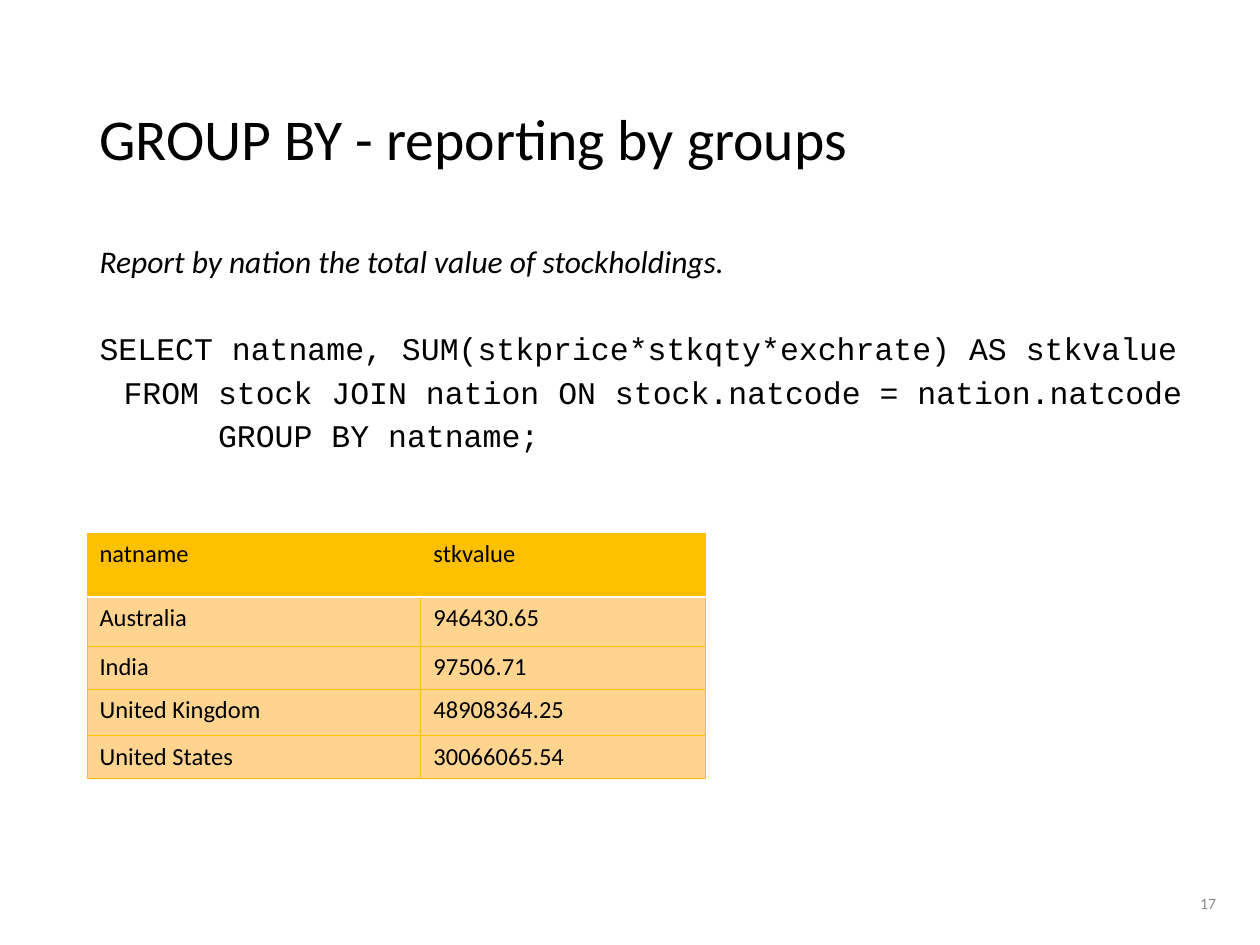
from lxml import etree
from pptx import Presentation
from pptx.dml.color import RGBColor
from pptx.enum.text import MSO_ANCHOR, MSO_AUTO_SIZE, PP_ALIGN
from pptx.oxml.ns import qn
from pptx.util import Inches, Pt

LEFT, RIGHT = PP_ALIGN.LEFT, PP_ALIGN.RIGHT
TOP, MIDDLE = MSO_ANCHOR.TOP, MSO_ANCHOR.MIDDLE
NO_FIT = MSO_AUTO_SIZE.NONE

COLORS = {
    "text": "000000",
    "number": "8C8C8C",
    "header": "FFC000",
    "row": "FFD48F",
    "rule": "FFFFFF",
}
SANS, CODE = "Calibri", "Courier New"
COLUMNS, ROWS = 100, 75

QUERY = [
    ("Report by nation the total value of stockholdings.", SANS, 0.19, -0.19, 7.5),
    ("SELECT natname, SUM(stkprice*stkqty*exchrate) AS stkvalue", CODE, 0.19, -0.19, 32.5),
    ("FROM stock JOIN nation ON stock.natcode = nation.natcode", CODE, 0.19, 0, 7.5),
    ("GROUP BY natname;", CODE, 0.94, 0, 7.5),
]
HOLDINGS = [
    ("natname", "stkvalue"),
    ("Australia", "946430.65"),
    ("India", "97506.71"),
    ("United Kingdom", "48908364.25"),
    ("United States", "30066065.54"),
]


class SlideBuilder:
    def __init__(self, deck):
        self.column = deck.slide_width / COLUMNS
        self.row = deck.slide_height / ROWS
        self.page = deck.slides.add_slide(deck.slide_layouts[1])

    def area(self, left, top, width, height):
        return [int(left * self.column), int(top * self.row),
                int(width * self.column), int(height * self.row)]

    def place(self, box, area):
        box.left, box.top, box.width, box.height = self.area(*area)

    def frame(self, box, anchor):
        frame = box.text_frame
        frame.word_wrap = True
        frame.auto_size = NO_FIT
        frame.vertical_anchor = anchor
        return frame

    def style(self, para, size, font=SANS, color="text", align=LEFT, italic=False):
        para.alignment = align
        for span in para.runs:
            span.font.name = font
            span.font.size = Pt(size)
            span.font.italic = italic
            span.font.bold = False
            span.font.color.rgb = RGBColor.from_string(COLORS[color])

    def title(self, text, area):
        box = self.page.shapes.title
        self.place(box, area)
        frame = self.frame(box, MIDDLE)
        frame.text = text
        frame.paragraphs[0].line_spacing = 0.9
        self.style(frame.paragraphs[0], 33)

    def body(self, lines, area):
        box = self.page.placeholders[1]
        self.place(box, area)
        frame = self.frame(box, TOP)
        frame.text = "\n".join(line[0] for line in lines)
        for para, (_, font, margin, indent, before) in zip(frame.paragraphs, lines):
            para.line_spacing = 0.8
            para.space_before = Pt(before)
            properties = para._p.get_or_add_pPr()
            properties.set("marL", str(Inches(margin)))
            properties.set("indent", str(Inches(indent)))
            etree.SubElement(properties, qn("a:buNone"))
            self.style(para, 18, font, italic=font == SANS)

    def number(self, text, area):
        box = self.page.shapes.add_textbox(*self.area(*area))
        frame = self.frame(box, MIDDLE)
        frame.text = text
        self.style(frame.paragraphs[0], 9, color="number", align=RIGHT)

    def border(self, cell, side, color, width):
        line = etree.SubElement(cell._tc.get_or_add_tcPr(), qn("a:ln" + side), w=str(Pt(width)))
        fill = etree.SubElement(line, qn("a:solidFill"))
        etree.SubElement(fill, qn("a:srgbClr"), val=COLORS[color])

    def table(self, records, left, top, widths, heights):
        area = self.area(left, top, sum(widths), sum(heights))
        table = self.page.shapes.add_table(len(records), len(widths), *area).table
        for column, width in zip(table.columns, widths):
            column.width = int(width * self.column)
        for row, height in zip(table.rows, heights):
            row.height = int(height * self.row)
        for index, record in enumerate(records):
            for place, text in enumerate(record):
                cell = table.cell(index, place)
                cell.text = text
                self.style(cell.text_frame.paragraphs[0], 14)
                for side in "LRTB":
                    divider = (index, side) in ((0, "B"), (1, "T"))
                    self.border(cell, side, "rule" if divider else "header", 1 if divider else 0.5)
                cell.fill.solid()
                cell.fill.fore_color.rgb = RGBColor.from_string(COLORS["row" if index else "header"])


def main():
    deck = Presentation()
    deck.slide_width, deck.slide_height = Inches(10), Inches(7.5)
    slide = SlideBuilder(deck)
    slide.title("GROUP BY - reporting by groups", (6.9, 4, 86.2, 14.5))
    slide.body(QUERY, (6.9, 19.3, 90.1, 17.8))
    slide.number("17", (75, 69.7, 22.5, 4))
    slide.table(HOLDINGS, 6.9, 42.3, (26.5, 22.6), (5.1, 3.9, 3.4, 3.7, 3.4))
    deck.save("out.pptx")


if __name__ == "__main__":
    main()
